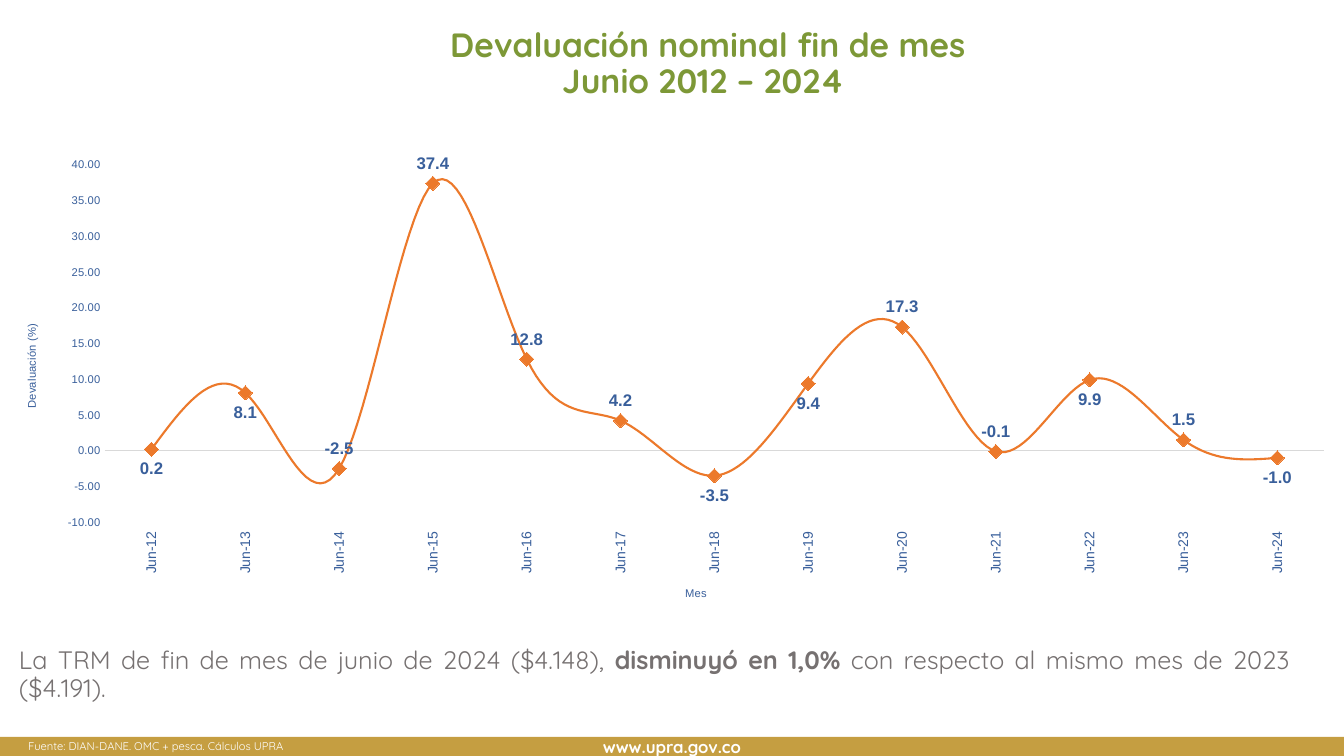
import dataclasses

import pptx
import pptx.chart.data
import pptx.dml.color
import pptx.enum.chart
import pptx.enum.shapes
import pptx.enum.text
import pptx.oxml
import pptx.oxml.ns
import pptx.util
from pptx.util import Inches

CHART_ENUM = pptx.enum.chart
ALIGN = pptx.enum.text.PP_ALIGN
ANCHOR = pptx.enum.text.MSO_ANCHOR
QN = pptx.oxml.ns.qn
NSDECLS = pptx.oxml.ns.nsdecls


@dataclasses.dataclass(frozen=True)
class Theme:
    heading_font: str = "Quicksand"
    chart_font: str = "Arial"
    green: str = "7D9837"
    gold: str = "C59E41"
    gray: str = "767171"
    blue: str = "395F9B"
    orange: str = "EC792B"
    marker: str = "ED7D31"
    rule: str = "D9D9D9"
    white: str = "FFFFFF"
    title_size: int = 24
    body_size: int = 18
    label_size: int = 12
    category_size: int = 10
    small_size: int = 8


def rgb(code):
    return pptx.dml.color.RGBColor.from_string(code)


class SlideBuilder:
    def __init__(self, slide, theme):
        self.slide = slide
        self.theme = theme

    def style_font(self, font, size, color, bold=False, name=None):
        font.name = name or self.theme.heading_font
        font.size = pptx.util.Pt(size)
        font.bold = bold
        font.color.rgb = rgb(color)

    def add_run(self, paragraph, text, size, color, bold=False):
        run = paragraph.add_run()
        run.text = text
        self.style_font(run.font, size, color, bold)

    def title(self, lines, left, top, width, height):
        heading = self.slide.shapes.title
        heading.left, heading.top = Inches(left), Inches(top)
        heading.width, heading.height = Inches(width), Inches(height)
        frame = heading.text_frame
        frame.word_wrap = True
        frame.auto_size = pptx.enum.text.MSO_AUTO_SIZE.NONE
        frame.vertical_anchor = ANCHOR.TOP
        paragraph = frame.paragraphs[0]
        paragraph.alignment = ALIGN.CENTER
        paragraph.line_spacing = 0.9
        for index, line in enumerate(lines):
            if index:
                paragraph.add_line_break()
            self.add_run(paragraph, line, self.theme.title_size, self.theme.green, True)

    def text(self, runs, left, top, width, height, size, color, line_spacing=1.0):
        """Add a justified paragraph; runs are (text, bold) pairs."""
        box = self.slide.shapes.add_textbox(
            Inches(left), Inches(top), Inches(width), Inches(height))
        box.text_frame.word_wrap = True
        paragraph = box.text_frame.paragraphs[0]
        paragraph.alignment = ALIGN.JUSTIFY
        paragraph.line_spacing = line_spacing
        for words, bold in runs:
            self.add_run(paragraph, words, size, color, bold)

    def footer_bar(self, address, left, top, width, height):
        bar = self.slide.shapes.add_shape(
            pptx.enum.shapes.MSO_SHAPE.RECTANGLE,
            Inches(left), Inches(top), Inches(width), Inches(height))
        bar.shadow.inherit = False
        bar.fill.solid()
        bar.fill.fore_color.rgb = rgb(self.theme.gold)
        bar.line.fill.background()
        bar.text_frame.vertical_anchor = ANCHOR.MIDDLE
        paragraph = bar.text_frame.paragraphs[0]
        paragraph.alignment = ALIGN.CENTER
        self.add_run(paragraph, address, self.theme.label_size, self.theme.white, True)

    def style_axis(self, axis, caption, size):
        theme = self.theme
        axis.has_major_gridlines = False
        axis.major_tick_mark = axis.minor_tick_mark = CHART_ENUM.XL_TICK_MARK.NONE
        self.style_font(axis.tick_labels.font, size, theme.blue, name=theme.chart_font)
        run = axis.axis_title.text_frame.paragraphs[0].add_run()
        run.text = caption
        self.style_font(run.font, theme.small_size, theme.blue, name=theme.chart_font)

    def style_labels(self, series, labels_below):
        theme = self.theme
        labels = series.data_labels
        labels.show_value = True
        labels.number_format = "0.0"
        labels.number_format_is_linked = False
        labels.position = CHART_ENUM.XL_LABEL_POSITION.ABOVE
        self.style_font(labels.font, theme.label_size, theme.blue, True, theme.chart_font)
        for index in labels_below:
            label = series.points[index].data_label
            self.style_font(label.font, theme.label_size, theme.blue, True, theme.chart_font)
            label.position = CHART_ENUM.XL_LABEL_POSITION.BELOW
        for label_xml in labels._element.findall(QN("c:dLbl")):
            label_xml.find(QN("c:idx")).addnext(pptx.oxml.parse_xml(
                f'<c:numFmt {NSDECLS("c")} formatCode="0.0" sourceLinked="0"/>'))

    def line_chart(self, months, rates, labels_below, left, top, width, height):
        theme = self.theme
        data = pptx.chart.data.CategoryChartData(number_format="0.0")
        data.categories = months
        data.add_series("Devaluación", rates)
        chart = self.slide.shapes.add_chart(
            CHART_ENUM.XL_CHART_TYPE.LINE_MARKERS, Inches(left), Inches(top),
            Inches(width), Inches(height), data).chart
        chart.has_legend = chart.has_title = False
        self.style_font(chart.font, theme.small_size, theme.blue, name=theme.chart_font)
        chart.plots[0].vary_by_categories = False

        series = chart.plots[0].series[0]
        series.smooth = True
        series.format.line.color.rgb = rgb(theme.orange)
        series.format.line.width = pptx.util.Pt(1.5)
        series.marker.style = CHART_ENUM.XL_MARKER_STYLE.DIAMOND
        series.marker.size = 10
        series.marker.format.fill.solid()
        series.marker.format.fill.fore_color.rgb = rgb(theme.marker)
        series.marker.format.line.fill.background()
        self.style_labels(series, labels_below)

        month_axis, rate_axis = chart.category_axis, chart.value_axis
        self.style_axis(month_axis, "Mes", theme.category_size)
        month_axis.tick_label_position = CHART_ENUM.XL_TICK_LABEL_POSITION.LOW
        month_axis.format.line.color.rgb = rgb(theme.rule)
        month_axis.format.line.width = pptx.util.Pt(0.75)
        month_text = month_axis._element.find(QN("c:txPr")).find(QN("a:bodyPr"))
        month_text.set("rot", "-5400000")
        month_text.set("vert", "horz")

        self.style_axis(rate_axis, "Devaluación (%)", theme.small_size)
        rate_axis.minimum_scale, rate_axis.maximum_scale = -10, 40
        rate_axis.major_unit = 5
        rate_axis.tick_labels.number_format = "#,##0.00"
        rate_axis.tick_labels.number_format_is_linked = False
        rate_axis.format.line.fill.background()
        rate_title = rate_axis.axis_title._element.find(".//" + QN("a:bodyPr"))
        rate_title.set("rot", "-5400000")
        rate_title.set("vert", "horz")
        self.place_plot(chart, x=0.072, y=0.036, w=0.92, h=0.778)

    def place_plot(self, chart, **fractions):
        """Fix the inner plot area as fractions of the chart frame."""
        area = month_parent = chart.category_axis._element.getparent()
        for layout in area.findall(QN("c:layout")):
            month_parent.remove(layout)
        settings = {"layoutTarget": "inner", "xMode": "edge", "yMode": "edge", **fractions}
        parts = "".join(f'<c:{key} val="{value}"/>' for key, value in settings.items())
        area.insert(0, pptx.oxml.parse_xml(
            f'<c:layout {NSDECLS("c")}><c:manualLayout>{parts}</c:manualLayout></c:layout>'))


def main():
    theme = Theme()
    deck = pptx.Presentation()
    deck.slide_width, deck.slide_height = Inches(13.33), Inches(7.5)
    title_only = deck.slide_layouts[5]
    page = SlideBuilder(deck.slides.add_slide(title_only), theme)

    page.footer_bar("www.upra.gov.co", 0, 7.31, 13.33, 0.19)
    page.title(["Devaluación nominal fin de mes", "Junio 2012 – 2024 "],
               2.44, 0.23, 9.16, 1.07)
    page.text([("Fuente: DIAN-DANE. OMC + pesca. Cálculos UPRA", False)],
              0.18, 7.29, 12.91, 0.24, theme.small_size, theme.white)
    page.text([("La TRM de fin de mes de junio de 2024 ($4.148), ", False),
               ("disminuyó en 1,0%", True),
               (" con respecto al mismo mes de 2023 ($4.191).", False)],
              0.09, 6.38, 12.8, 0.77, theme.body_size, theme.gray, 0.9)
    months = [f"Jun-{year}" for year in range(12, 25)]
    rates = [0.2, 8.1, -2.5, 37.4, 12.8, 4.2, -3.5, 9.4, 17.3, -0.1, 9.9, 1.5, -1.0]
    page.line_chart(months, rates, (0, 1, 6, 7, 10, 12), 0.09, 1.47, 13.15, 4.56)
    deck.save("out.pptx")


if __name__ == "__main__":
    main()
